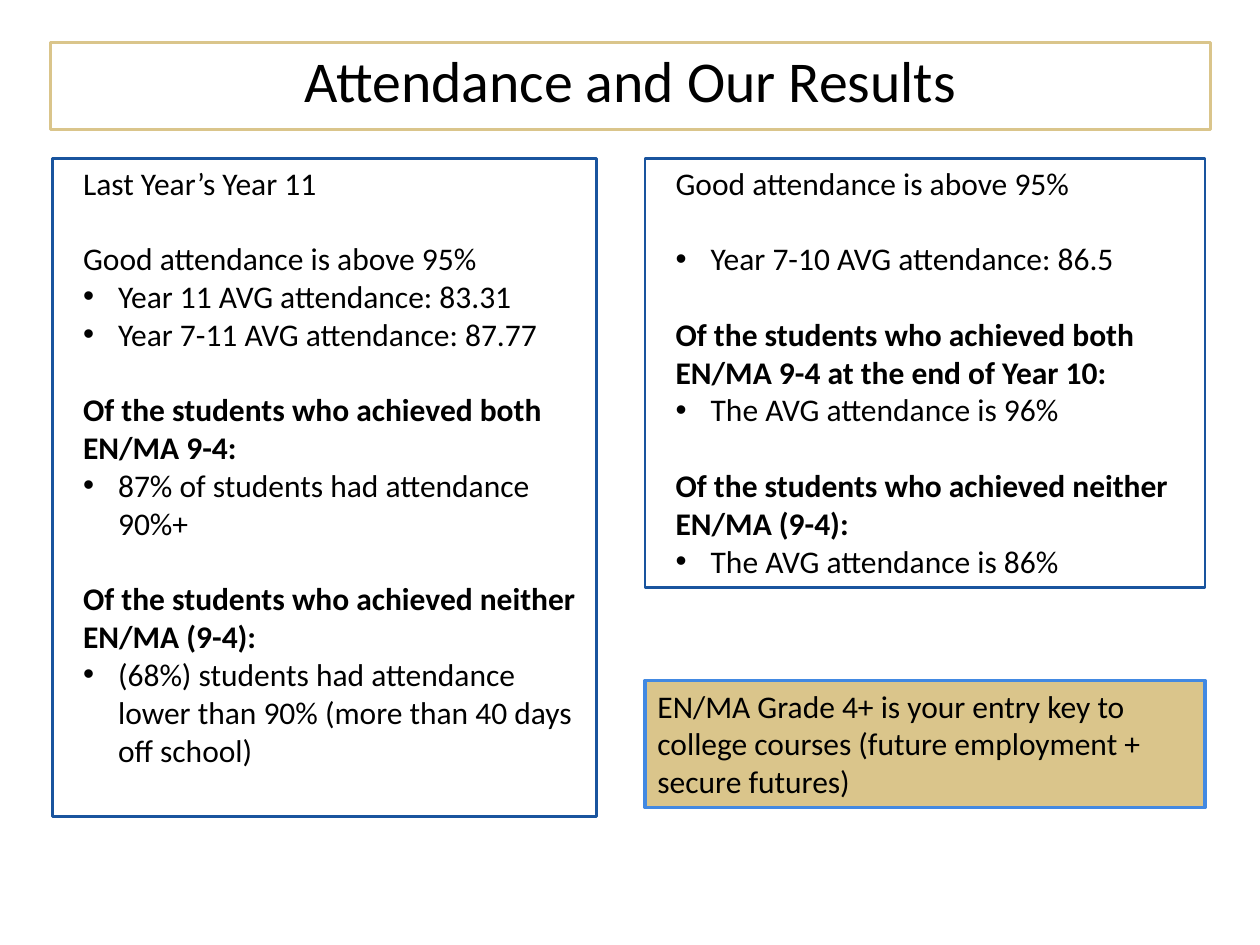
from lxml import etree
from pptx import Presentation, util as u
from pptx.dml.color import RGBColor
from pptx.enum import shapes, text
from pptx.oxml.ns import qn

Pt = u.Pt
FONT = "Calibri"
BLACK, GOLD, NAVY, BLUE = "000000", "DAC58B", "19549E", "4289E2"
BLANK_LINE = 21.6
INDENT, BULLET_INDENT, HANGING = 12.5, 32.5, -20

# Each group is a list of (kind, wording); groups are one blank line apart.
LAST_YEAR = [
    [("plain", "Last Year’s Year 11")],
    [("plain", "Good attendance is above 95%"),
     ("bullet", "Year 11 AVG attendance: 83.31"),
     ("bullet", "Year 7-11 AVG attendance: 87.77")],
    [("bold", "Of the students who achieved both EN/MA 9-4:"),
     ("bullet", "87% of students had attendance 90%+")],
    [("bold", "Of the students who achieved neither EN/MA (9-4):"),
     ("bullet", "(68%) students had attendance lower than 90% "
                "(more than 40 days off school)")],
]
THIS_YEAR = [
    [("plain", "Good attendance is above 95%")],
    [("bullet", "Year 7-10 AVG attendance: 86.5")],
    [("bold", "Of the students who achieved both EN/MA 9-4 at the end of Year 10:"),
     ("bullet", "The AVG attendance is 96%")],
    [("bold", "Of the students who achieved neither EN/MA (9-4):"),
     ("bullet", "The AVG attendance is 86%")],
]


def color(hex_string):
    return RGBColor.from_string(hex_string)


def set_all(target, values):
    for name, value in values.items():
        setattr(target, name, value)


def format_box(shape, box, line_color, line_width, margins, anchor):
    """Place a shape, outline it and set up its text frame."""
    left, top, width, height = map(Pt, box)
    set_all(shape, dict(left=left, top=top, width=width, height=height))
    shape.line.color.rgb = color(line_color)
    shape.line.width = Pt(line_width)
    side, edge = map(Pt, margins)
    set_all(shape.text_frame, dict(
        margin_left=side, margin_right=side, margin_top=edge, margin_bottom=edge,
        word_wrap=True, auto_size=text.MSO_AUTO_SIZE.NONE, vertical_anchor=anchor))


def add_run(paragraph, wording, size, bold=False):
    run = paragraph.add_run()
    run.text = wording
    set_all(run.font, dict(name=FONT, size=Pt(size), bold=bold))
    run.font.color.rgb = color(BLACK)


def set_bullet(paragraph, bulleted):
    properties = paragraph._p.get_or_add_pPr()
    properties.set("marL", str(Pt(BULLET_INDENT if bulleted else INDENT)))
    properties.set("indent", str(Pt(HANGING) if bulleted else 0))
    if bulleted:
        bullet_color = etree.SubElement(properties, qn("a:buClr"))
        etree.SubElement(bullet_color, qn("a:srgbClr"), val=BLACK)
        etree.SubElement(properties, qn("a:buFont"), typeface="Arial")
        etree.SubElement(properties, qn("a:buChar"), char="•")
    else:
        etree.SubElement(properties, qn("a:buNone"))


def fill_title(shape, box, wording):
    format_box(shape, box, GOLD, 1.5, (7.2, 3.6), text.MSO_ANCHOR.MIDDLE)
    paragraph = shape.text_frame.paragraphs[0]
    set_all(paragraph, dict(alignment=text.PP_ALIGN.CENTER, line_spacing=0.8))
    add_run(paragraph, wording, 33)


def fill_panel(shape, box, groups):
    format_box(shape, box, NAVY, 1.5, (5, 3), text.MSO_ANCHOR.TOP)
    frame = shape.text_frame
    for group_number, group in enumerate(groups):
        for position, (kind, wording) in enumerate(group):
            starts_group = position == 0
            first = starts_group and group_number == 0
            paragraph = frame.paragraphs[0] if first else frame.add_paragraph()
            gap = BLANK_LINE if starts_group and not first else 0
            set_all(paragraph, dict(alignment=text.PP_ALIGN.LEFT,
                                    space_before=Pt(gap), space_after=Pt(0)))
            set_bullet(paragraph, kind == "bullet")
            add_run(paragraph, wording, 18, kind == "bold")


def add_callout(slide, box, wording):
    shape = slide.shapes.add_shape(shapes.MSO_SHAPE.RECTANGLE, *map(Pt, box))
    shape.shadow.inherit = False
    shape.fill.solid()
    shape.fill.fore_color.rgb = color(GOLD)
    format_box(shape, box, BLUE, 2, (7.2, 3.6), text.MSO_ANCHOR.TOP)
    paragraph = shape.text_frame.paragraphs[0]
    paragraph.alignment = text.PP_ALIGN.LEFT
    add_run(paragraph, wording, 18)


def main():
    presentation = Presentation()
    presentation.slide_width, presentation.slide_height = Pt(720), Pt(540)
    two_content = presentation.slide_layouts[3]
    slide = presentation.slides.add_slide(two_content)
    title, left_panel, right_panel = slide.placeholders

    panel_top, right_left, right_width = 90.5, 368.6, 320
    fill_title(title, (28.8, 24.3, 663, 49.6), "Attendance and Our Results")
    fill_panel(left_panel, (30, panel_top, 311, 376.2), LAST_YEAR)
    fill_panel(right_panel, (right_left, panel_top, right_width, 245.2), THIS_YEAR)
    add_callout(slide, (right_left, 388.8, right_width, 72.7),
                "EN/MA Grade 4+ is your entry key to college courses "
                "(future employment + secure futures)")
    presentation.save("out.pptx")


if __name__ == "__main__":
    main()
